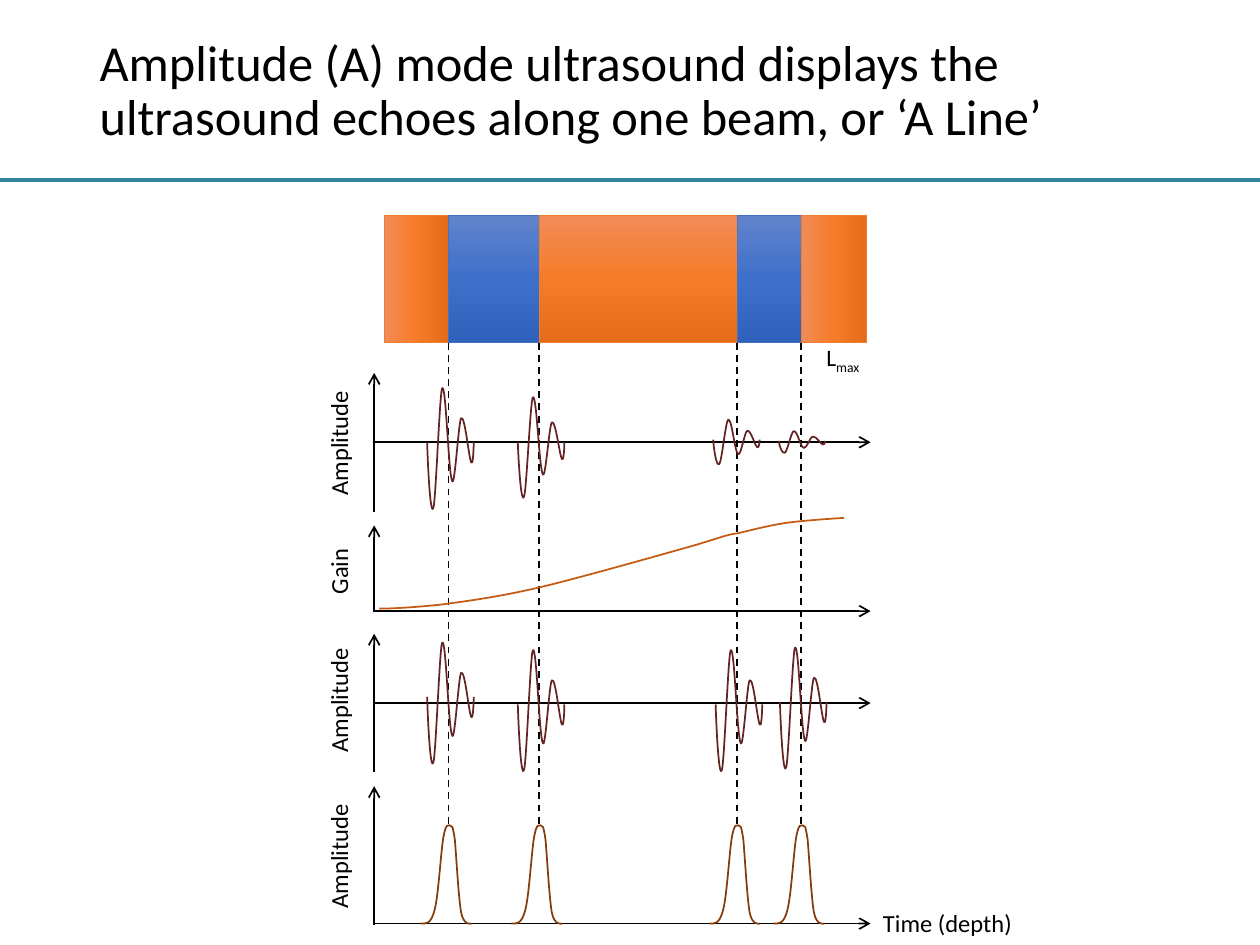
from copy import deepcopy

from lxml import etree
from pptx import Presentation
from pptx.dml.color import RGBColor
from pptx.enum.dml import MSO_LINE
from pptx.enum.shapes import MSO_CONNECTOR, MSO_SHAPE
from pptx.enum.text import MSO_ANCHOR, MSO_AUTO_SIZE, PP_ALIGN
from pptx.oxml.ns import qn
from pptx.util import Inches, Pt

STRAIGHT = MSO_CONNECTOR.STRAIGHT
BLOCK = MSO_SHAPE.ROUNDED_RECTANGLE
DASH = MSO_LINE.DASH
MIDDLE = MSO_ANCHOR.MIDDLE
LEFT = PP_ALIGN.LEFT
FIT, FIXED = MSO_AUTO_SIZE.SHAPE_TO_FIT_TEXT, MSO_AUTO_SIZE.NONE

BLUE = ("6183CB", "3E70CA", "3062BB"), "4472C4"
ORANGE = ("F18C57", "F67B28", "E56C19"), "ED7D31"

# Cubic curves as a start point, then two controls and an end per segment.
PULSE = [(0, 0), (.01, .3), (.03, .59), (.05, .52), (.07, .45), (.1, -.4), (.12, -.43),
         (.15, -.47), (.17, .27), (.2, .31), (.22, .35), (.25, -.16), (.27, -.19),
         (.3, -.22), (.33, .12), (.35, .16), (.36, .19), (.37, .09), (.37, 0)]
BUMP = [(0, 0), (.04, 0), (.08, .01), (.11, -.11), (.14, -.22), (.16, -.58), (.18, -.69),
        (.2, -.8), (.22, -.78), (.23, -.78), (.25, -.77), (.25, -.79), (.27, -.67),
        (.28, -.56), (.3, -.2), (.32, -.09), (.34, .02), (.4, 0), (.4, 0)]
GAIN = [(3.01, 4.83), (3.14, 4.83), (3.28, 4.82), (3.49, 4.8), (3.71, 4.77), (3.95, 4.74),
        (4.29, 4.66), (4.63, 4.58), (5.54, 4.32), (5.54, 4.32), (5.8, 4.24), (5.75, 4.25),
        (5.87, 4.23), (5.99, 4.2), (6.11, 4.17), (6.24, 4.15), (6.38, 4.13), (6.7, 4.11),
        (6.7, 4.11)]


def color(code):
    return RGBColor.from_string(code)


def apply(target, values):
    for name, value in values.items():
        setattr(target, name, value)


class Board:
    font = "Calibri"
    ink = "000000"

    def __init__(self, deck):
        self.slide = deck.slides.add_slide(deck.slide_layouts[5])
        self.shapes = self.slide.shapes

    def style(self, run, size):
        apply(run.font, {"name": self.font, "size": Pt(size)})
        run.font.color.rgb = color(self.ink)

    def title(self, text, x, y, w, h):
        box = self.shapes.title
        apply(box, {"left": Inches(x), "top": Inches(y),
                    "width": Inches(w), "height": Inches(h)})
        apply(box.text_frame, {"text": text, "vertical_anchor": MIDDLE,
                               "word_wrap": True, "auto_size": FIXED})
        para = box.text_frame.paragraphs[0]
        apply(para, {"alignment": LEFT, "line_spacing": 0.9})
        self.style(para.runs[0], 28.8)

    def label(self, text, x, y, w, h, size=14, turn=0, sub=""):
        box = self.shapes.add_textbox(Inches(x), Inches(y), Inches(w), Inches(h))
        box.rotation = turn
        apply(box.text_frame, {"word_wrap": False, "auto_size": FIT})
        para = box.text_frame.paragraphs[0]
        for part in filter(None, (text, sub)):
            run = para.add_run()
            run.text = part
            self.style(run, size)
        if sub:
            run._r.get_or_add_rPr().set("baseline", "-25000")

    def line(self, x1, y1, x2, y2, code=ink, width=1, dash=None, arrow=False):
        link = self.shapes.add_connector(STRAIGHT, Inches(x1), Inches(y1),
                                         Inches(x2), Inches(y2))
        apply(link.line, {"width": Pt(width), "dash_style": dash})
        link.line.color.rgb = color(code)
        props = link._element.spPr
        if arrow:
            etree.SubElement(props.find(qn("a:ln")), qn("a:tailEnd"), type="arrow")
        etree.SubElement(props, qn("a:effectLst"))

    def curve(self, points, code, x=0, y=0, scale=1):
        """Outline through every third point, bent by the controls between."""
        spots = [(Inches(x + px), Inches(y + py * scale)) for px, py in points]
        pen = self.shapes.build_freeform(*spots[0])
        pen.add_line_segments(spots[3::3], close=False)
        shape = pen.convert_to_shape()
        for i, step in enumerate(list(shape._element.iter(qn("a:lnTo")))):
            bend = etree.Element(qn("a:cubicBezTo"))
            for px, py in spots[3 * i + 1:3 * i + 4]:
                etree.SubElement(bend, qn("a:pt"), x=str(px - shape.left),
                                 y=str(py - shape.top))
            step.getparent().replace(step, bend)
        shape.shadow.inherit = False
        shape.fill.background()
        shape.line.width = Pt(1)
        shape.line.color.rgb = color(code)

    def block(self, x1, x2, tones, edge, angle):
        """Tissue layer from x1 to x2, stored as a shape turned by 270 degrees."""
        long, wide, mid, top = 1.01, x2 - x1, (x1 + x2) / 2, 1.71
        shape = self.shapes.add_shape(BLOCK, Inches(mid - long / 2),
                                      Inches(top + long / 2 - wide / 2),
                                      Inches(long), Inches(wide))
        shape.adjustments[0] = 0
        shape.rotation = 270
        shape.shadow.inherit = False
        shape.fill.gradient()
        shape.fill.gradient_angle = angle
        first = shape._element.spPr.find(".//" + qn("a:gs"))
        first.addnext(deepcopy(first))
        for stop, tone, place in zip(shape.fill.gradient_stops, tones, (0, 0.5, 1)):
            stop.color.rgb = color(tone)
            stop.position = place
        shape.line.width = Pt(0.5)
        shape.line.color.rgb = color(edge)

    def axes(self, base, foot, tip, name, top, wide=1.04):
        self.line(2.98, base, 6.91, base, arrow=True)
        self.line(2.97, foot, 2.97, tip, arrow=True)
        self.label(name, 2.69 - wide / 2, top, wide, 0.34, turn=270)


def main():
    deck = Presentation()
    apply(deck, {"slide_width": Inches(10), "slide_height": Inches(7.5)})
    board = Board(deck)
    board.title("Amplitude (A) mode ultrasound displays the ultrasound echoes "
                "along one beam, or ‘A Line’", 0.69, 0.22, 8.62, 1.02)

    walls = 3.56, 4.28, 5.85, 6.36
    for x in walls:
        board.line(x, 2.72, x, 6.55, dash=DASH)

    edges = 3.05, *walls, 6.88
    for i, (x1, x2) in enumerate(zip(edges, edges[1:])):
        tones, edge = BLUE if i % 2 else ORANGE
        board.block(x1, x2, tones, edge, 270 if i in (0, 4) else 180)
    board.label("L", 6.46, 2.67, 0.6, 0.4, size=13.5, sub="max")

    board.axes(3.51, 4.06, 2.96, "Amplitude", 3.34)
    board.axes(4.85, 4.86, 4.17, "Gain", 4.36, wide=0.57)
    board.axes(5.58, 6.13, 5.03, "Amplitude", 5.38)
    board.axes(7.33, 7.34, 6.24, "Amplitude", 6.62)
    board.label("Time (depth)", 6.91, 7.16, 1.23, 0.34)

    echoes = [(3.39, 3.51, 1), (4.11, 3.51, 0.83), (5.66, 3.49, 0.37), (6.18, 3.5, 0.18),
              (3.39, 5.53, 1), (4.11, 5.59, 1), (5.68, 5.59, 1), (6.19, 5.57, 1)]
    for x, y, scale in echoes:
        board.curve(PULSE, "632523", x, y, scale)
    board.curve(GAIN, "C55A11")
    for x in walls:
        board.curve(BUMP, "843C0B", x - 0.22, 7.33)
    board.line(10, 1.43, 0, 1.43, "31859C", 2.25)
    deck.save("out.pptx")


if __name__ == "__main__":
    main()
